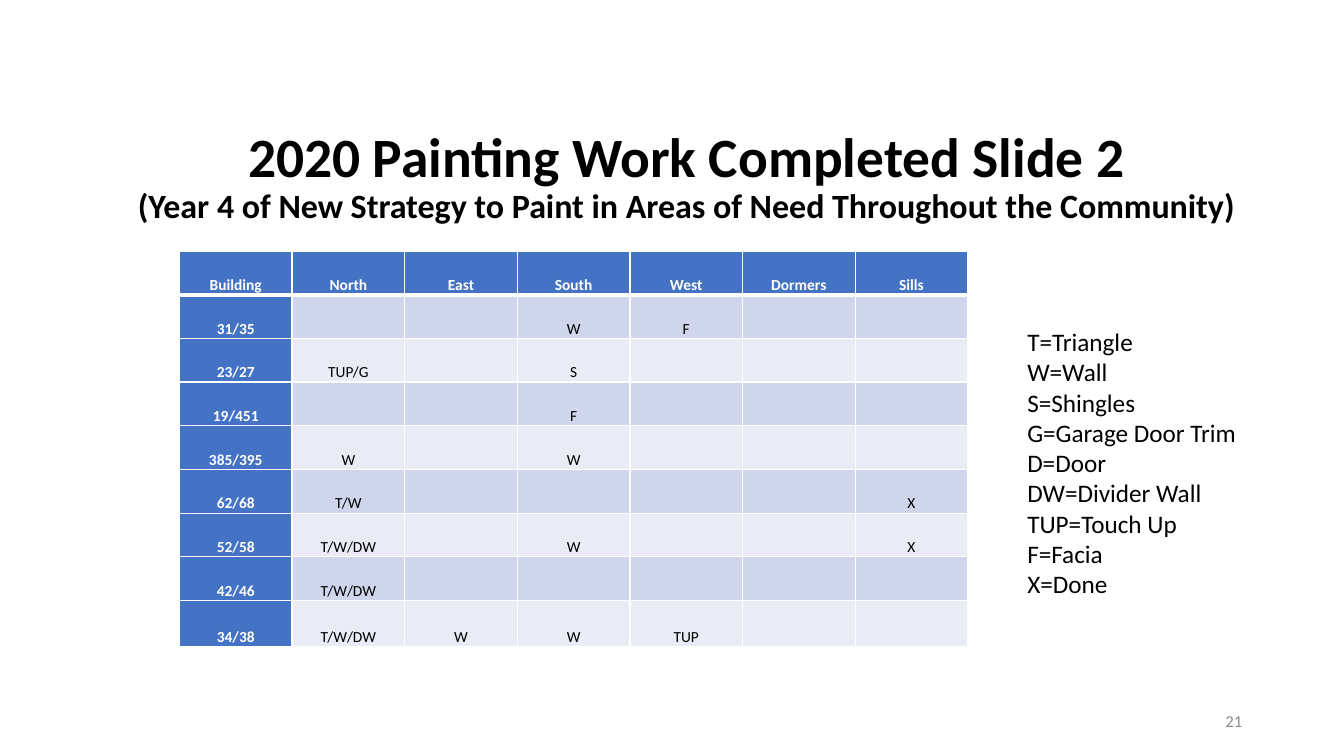
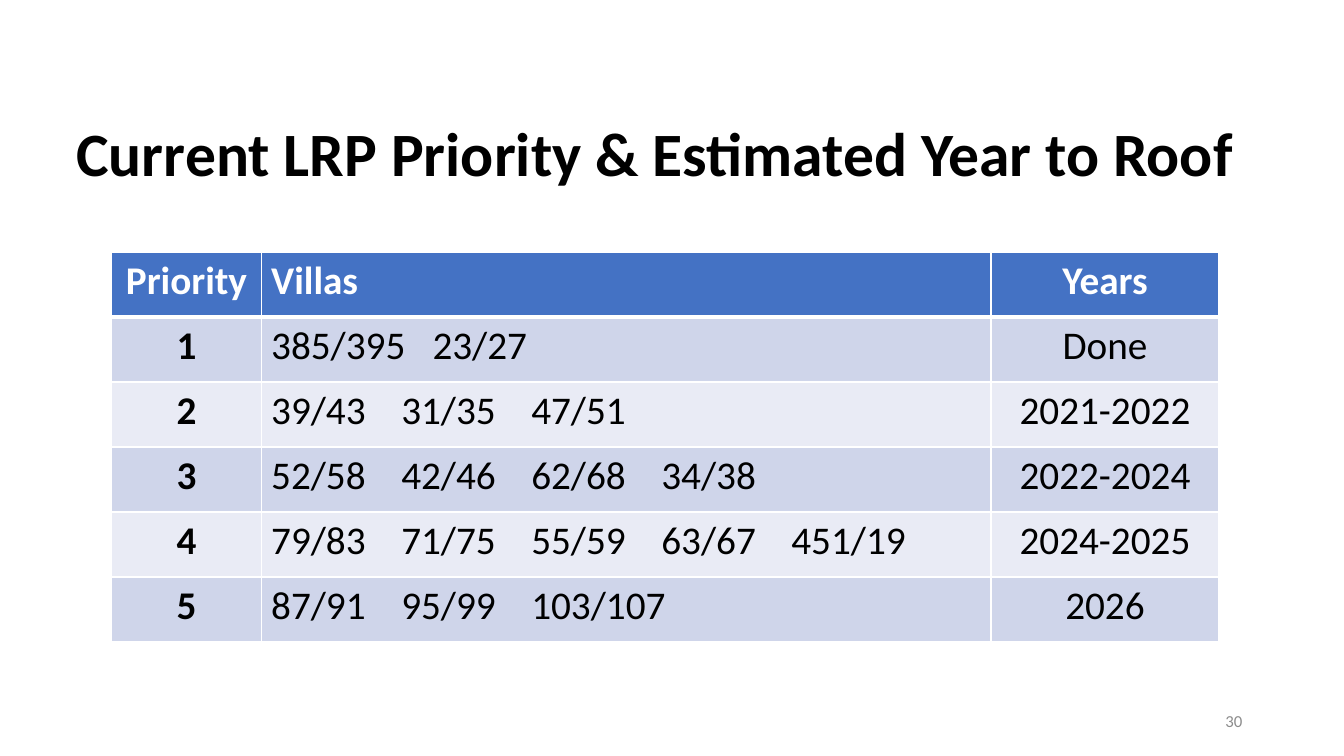
from lxml.etree import SubElement
from pptx import Presentation
from pptx.dml.color import RGBColor
from pptx.enum.text import MSO_ANCHOR as Anchor, MSO_AUTO_SIZE as AutoSize, PP_ALIGN as Align
from pptx.oxml.ns import qn
from pptx.util import Inches, Pt

# Shared style
FONT = "Calibri"
BLACK = RGBColor(0x00, 0x00, 0x00)
WHITE = RGBColor(0xFF, 0xFF, 0xFF)
GRAY = RGBColor(0x8C, 0x8C, 0x8C)
BLUE = RGBColor(0x44, 0x72, 0xC4)
BANDS = (RGBColor(0xCF, 0xD5, 0xEA), RGBColor(0xE9, 0xEB, 0xF5))
TITLE_ONLY = 5

# Content
PAINT_TITLE = (
    ("2020 Painting Work Completed Slide 2", 39.6),
    ("(Year 4 of New Strategy to Paint in Areas of Need Throughout the Community)", 24.3),
)
PAINT_ROWS = [
    ("Building", "North", "East", "South", "West", "Dormers", "Sills"),
    ("31/35", "", "", "W", "F", "", ""),
    ("23/27", "TUP/G", "", "S", "", "", ""),
    ("19/451", "", "", "F", "", "", ""),
    ("385/395", "W", "", "W", "", "", ""),
    ("62/68", "T/W", "", "", "", "", "X"),
    ("52/58", "T/W/DW", "", "W", "", "", "X"),
    ("42/46", "T/W/DW", "", "", "", "", ""),
    ("34/38", "T/W/DW", "W", "W", "TUP", "", ""),
]
LEGEND = [
    "T=Triangle", "W=Wall", "S=Shingles", "G=Garage Door Trim", "D=Door",
    "DW=Divider Wall", "TUP=Touch Up", "F=Facia", "X=Done",
]
ROOF_TITLE = (("Current LRP Priority & Estimated Year to Roof", 44),)
ROOF_ROWS = [
    ("Priority", "Villas", "Years"),
    ("1", "385/395\t23/27", "Done"),
    ("2", "39/43\t31/35\t47/51", "2021-2022"),
    ("3", "52/58\t42/46\t62/68\t34/38", "2022-2024"),
    ("4", "79/83\t71/75\t55/59\t63/67\t451/19", "2024-2025"),
    ("5", "87/91\t95/99\t103/107", "2026"),
]
VILLA_STEP, WIDE_VILLA_STEP = 1.29, 1.6


def style_paragraph(paragraph, size, color=BLACK, bold=False, align=Align.LEFT):
    paragraph.alignment = align
    font = paragraph.font
    font.name, font.size, font.bold = FONT, Pt(size), bold
    font.color.rgb = color


def add_titled_slide(presentation, lines, box, number):
    """Title-only slide with a centred bold title and a page number."""
    slide = presentation.slides.add_slide(presentation.slide_layouts[TITLE_ONLY])
    title = slide.shapes.title
    title.left, title.top, title.width, title.height = map(Inches, box)
    frame = title.text_frame
    frame.word_wrap, frame.auto_size = True, AutoSize.NONE
    frame.vertical_anchor = Anchor.MIDDLE
    paragraph = frame.paragraphs[0]
    style_paragraph(paragraph, lines[0][1], bold=True, align=Align.CENTER)
    paragraph.line_spacing = 0.9
    for index, (text, size) in enumerate(lines):
        if index:
            paragraph.add_line_break()
        run = paragraph.add_run()
        run.text, run.font.size = text, Pt(size)
    add_text(slide, [number], (9.42, 6.95, 3, 0.4), 12, GRAY, Align.RIGHT, Anchor.MIDDLE)
    return slide


def add_text(slide, lines, box, size, color=BLACK, align=Align.LEFT, anchor=Anchor.TOP):
    frame = slide.shapes.add_textbox(*map(Inches, box)).text_frame
    frame.word_wrap, frame.vertical_anchor = True, anchor
    frame.text = "\n".join(lines)
    for paragraph in frame.paragraphs:
        style_paragraph(paragraph, size, color, align=align)


def set_borders(cell, is_header, below_header):
    """White 1 pt grid with a 3 pt rule under the header row."""
    properties = cell._tc.get_or_add_tcPr()
    widths = {"lnL": 1, "lnR": 1, "lnT": 3 if below_header else 1, "lnB": 3 if is_header else 1}
    for side, width in widths.items():
        line = SubElement(properties, qn(f"a:{side}"), w=str(Pt(width)))
        fill = SubElement(line, qn("a:solidFill"))
        SubElement(fill, qn("a:srgbClr"), val=str(WHITE))


def set_tabs(paragraph, step, count):
    tab_list = paragraph._p.get_or_add_pPr()
    stops = tab_list.makeelement(qn("a:tabLst"))
    for index in range(1, count + 1):
        SubElement(stops, qn("a:tab"), pos=str(Inches(step * index)), algn="l")
    tab_list.find(qn("a:defRPr")).addprevious(stops)


def add_grid(slide, rows, origin, widths, heights, size, blue_first_column=False,
             left_columns=(), anchor=Anchor.TOP, margin=None):
    box = (*origin, sum(widths), sum(heights))
    table = slide.shapes.add_table(len(rows), len(widths), *map(Inches, box)).table
    table.first_col = blue_first_column
    for column, width in zip(table.columns, widths):
        column.width = Inches(width)
    for row, height in zip(table.rows, heights):
        row.height = Inches(height)
    for r, texts in enumerate(rows):
        for c, text in enumerate(texts):
            cell = table.cell(r, c)
            is_blue = r == 0 or (blue_first_column and c == 0)
            set_borders(cell, r == 0, r == 1)
            cell.fill.solid()
            cell.fill.fore_color.rgb = BLUE if is_blue else BANDS[(r - 1) % 2]
            cell.vertical_anchor = anchor
            if margin is not None:
                cell.margin_left = cell.margin_right = Inches(margin)
                cell.margin_top = cell.margin_bottom = Inches(margin)
            cell.text = text
            paragraph = cell.text_frame.paragraphs[0]
            style_paragraph(paragraph, size, WHITE if is_blue else BLACK, r == 0 or c == 0,
                            Align.LEFT if c in left_columns else Align.CENTER)
            if "\t" in text:
                step = WIDE_VILLA_STEP if len(text.split("\t")[0]) > 5 else VILLA_STEP
                set_tabs(paragraph, step, text.count("\t"))


def main():
    presentation = Presentation()
    presentation.slide_width, presentation.slide_height = Inches(13.33), Inches(7.5)

    # Painting work by building and side
    slide = add_titled_slide(presentation, PAINT_TITLE, (1.06, 1.04, 11.5, 1.45), "21")
    last_height = 0.46
    body_rows = len(PAINT_ROWS) - 1
    heights = [(3.93 - last_height) / body_rows] * body_rows + [last_height]
    columns = len(PAINT_ROWS[0])
    add_grid(slide, PAINT_ROWS, (1.78, 2.49), [7.82 / columns] * columns, heights, 11,
             blue_first_column=True, anchor=Anchor.BOTTOM, margin=0)
    add_text(slide, LEGEND, (10.09, 3.19, 2.61, 2.83), 18)

    # Roofing priorities
    slide = add_titled_slide(presentation, ROOF_TITLE, (0.65, 0.83, 11.7, 1.45), "30")
    rows = len(ROOF_ROWS)
    add_grid(slide, ROOF_ROWS, (1.11, 2.5), (1.48, 7.24, 2.26), [3.87 / rows] * rows, 28,
             left_columns=(1,))

    presentation.save("out.pptx")


if __name__ == "__main__":
    main()
